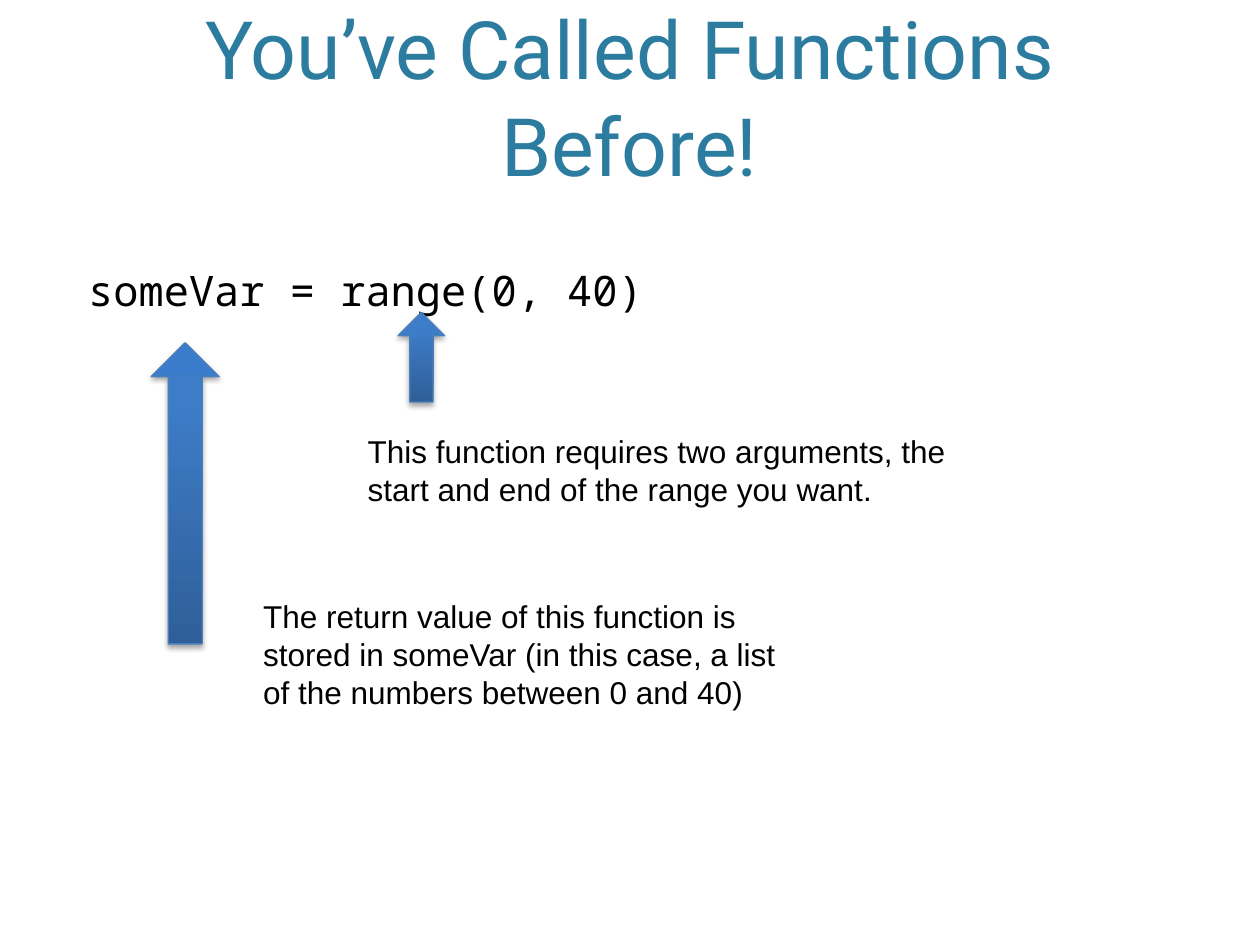
import pptx
import pptx.util
import pptx.oxml
import pptx.oxml.ns
import pptx.dml.color
import pptx.enum.shapes
import pptx.enum.text
from pptx.util import Inches

COLORS = {
    "title": "2C7C9F",
    "text": "000000",
    "arrow_line": "4B7EBC",
    "shadow": "000000",
}
ARROW_STOPS = [(0, "2F5F99"), (80, "3D7CC7"), (100, "3A7CCB")]
NS = pptx.oxml.ns.nsdecls("a")
ALIGN = pptx.enum.text.PP_ALIGN
ANCHOR = pptx.enum.text.MSO_ANCHOR
AUTO = pptx.enum.text.MSO_AUTO_SIZE


def rgb(name):
    return pptx.dml.color.RGBColor.from_string(COLORS[name])


def write(tf, text, font="Arial", size=18, color="text", align=ALIGN.LEFT,
          anchor=ANCHOR.TOP, spacing=None, auto_size=AUTO.NONE):
    tf.word_wrap = True
    tf.auto_size = auto_size
    tf.vertical_anchor = anchor
    p = tf.paragraphs[0]
    p.alignment = align
    p.space_before = pptx.util.Pt(0)
    p.line_spacing = spacing
    r = p.add_run()
    r.text = text
    r.font.name = font
    r.font.size = pptx.util.Pt(size)
    r.font.color.rgb = rgb(color)
    return p


def place(s, left, top, width, height):
    s.left, s.top = Inches(left), Inches(top)
    s.width, s.height = Inches(width), Inches(height)


class SlideBuilder:
    def __init__(self, prs):
        self.slide = prs.slides.add_slide(prs.slide_layouts[1])
        self.shapes = self.slide.shapes

    def title(self, text, *box):
        s = self.shapes.title
        place(s, *box)
        write(s.text_frame, text, font="Roboto", size=46, color="title",
              align=ALIGN.CENTER, anchor=ANCHOR.BOTTOM)

    def code(self, text, *box):
        s = self.slide.placeholders[1]
        place(s, *box)
        p = write(s.text_frame, text, font="Noto Sans Mono", size=24, spacing=0.8)
        pPr = p._p.get_or_add_pPr()
        pPr.set("marL", "0")
        pPr.set("indent", "0")
        pPr.append(pptx.oxml.parse_xml(f"<a:buNone {NS}/>"))

    def note(self, text, *box):
        s = self.shapes.add_textbox(*map(Inches, box))
        write(s.text_frame, text, auto_size=AUTO.SHAPE_TO_FIT_TEXT)

    def up_arrow(self, *box):
        """Add an arrow with a vertical gradient and a soft shadow below."""
        kind = pptx.enum.shapes.MSO_SHAPE.UP_ARROW
        s = self.shapes.add_shape(kind, *map(Inches, box))
        s.line.color.rgb = rgb("arrow_line")
        s.line.width = pptx.util.Pt(0.75)
        s.shadow.inherit = False
        spPr = s._element.spPr
        stops = "".join(f'<a:gs pos="{pos * 1000}"><a:srgbClr val="{c}"/></a:gs>'
                        for pos, c in ARROW_STOPS)
        spPr.find(pptx.oxml.ns.qn("a:prstGeom")).addnext(pptx.oxml.parse_xml(
            f'<a:gradFill {NS} rotWithShape="1"><a:gsLst>{stops}</a:gsLst>'
            '<a:lin ang="16200000" scaled="0"/></a:gradFill>'))
        spPr.find(pptx.oxml.ns.qn("a:effectLst")).append(pptx.oxml.parse_xml(
            f'<a:outerShdw {NS} blurRad="40000" dist="23000" dir="5400000" '
            f'rotWithShape="0"><a:srgbClr val="{COLORS["shadow"]}">'
            '<a:alpha val="35000"/></a:srgbClr></a:outerShdw>'))


def main():
    prs = pptx.Presentation()
    prs.slide_width, prs.slide_height = Inches(10), Inches(7.5)
    b = SlideBuilder(prs)
    b.title("You’ve Called Functions Before!", 0.6, 0.12, 8.79, 1.46)
    b.code("someVar = range(0, 40)", 0.6, 2.13, 8.79, 4.37)
    b.up_arrow(3.16, 2.48, 0.37, 0.71)
    b.note("This function requires two arguments, the start and end of the "
           "range you want.", 2.82, 3.38, 5.12, 0.71)
    b.up_arrow(1.2, 2.72, 0.54, 2.39)
    b.note("The return value of this function is stored in someVar (in this "
           "case, a list of the numbers between 0 and 40)", 1.99, 4.69, 4.35, 1.01)
    prs.save("out.pptx")


if __name__ == "__main__":
    main()
